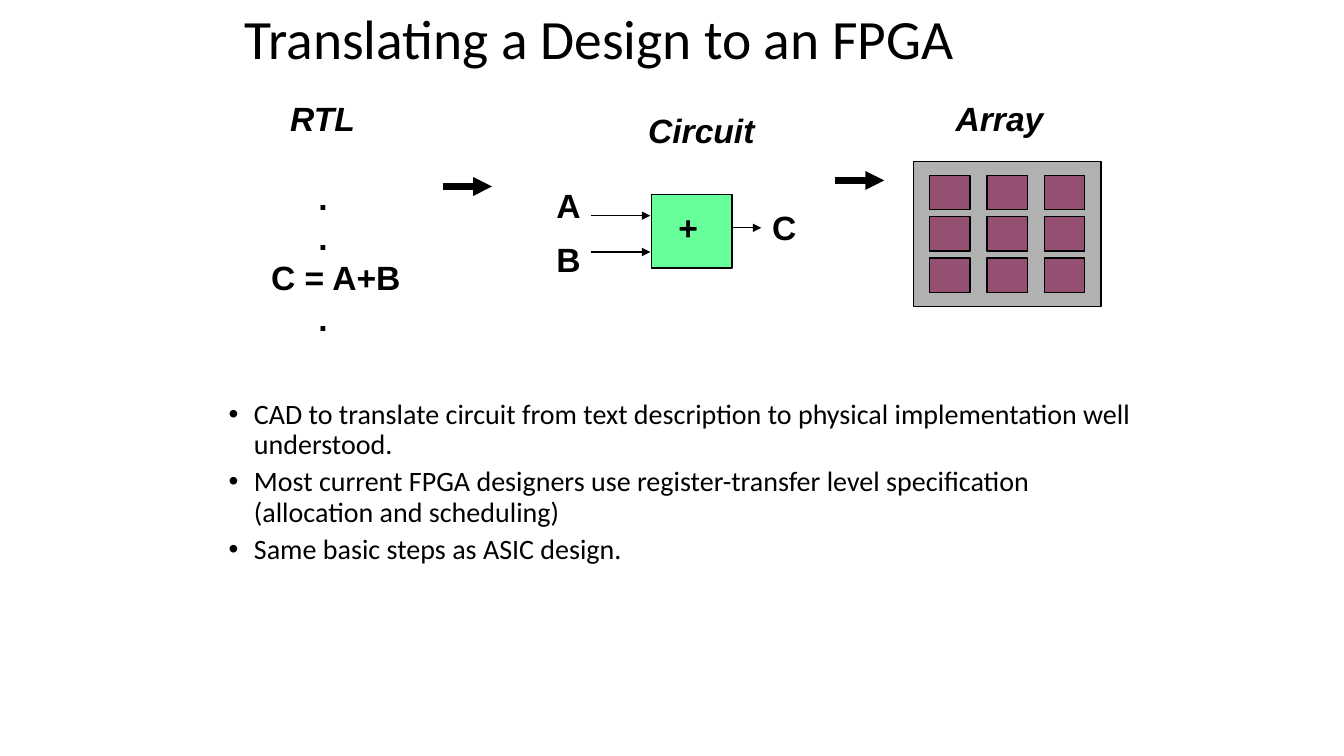
from dataclasses import dataclass

from lxml import etree
from pptx import Presentation
from pptx.dml.color import RGBColor
from pptx.enum.shapes import MSO_CONNECTOR, MSO_SHAPE
from pptx.enum.text import MSO_ANCHOR
from pptx.oxml.ns import qn
from pptx.slide import Slide
from pptx.util import Inches, Pt

RECTANGLE = MSO_SHAPE.RECTANGLE
STRAIGHT = MSO_CONNECTOR.STRAIGHT
TOP, MIDDLE = MSO_ANCHOR.TOP, MSO_ANCHOR.MIDDLE


@dataclass(frozen=True)
class Theme:
    ink: str = "000000"
    adder: str = "66FF99"
    panel: str = "B1B1B1"
    cell: str = "954F72"
    text_font: str = "Calibri"
    label_font: str = "Arial"
    title_size: float = 39.6
    body_size: float = 20
    label_size: float = 24
    thin: float = 1
    thick: float = 4.5


THEME = Theme()


@dataclass(frozen=True)
class Box:
    left: float
    top: float
    width: float
    height: float
    fill: str = THEME.panel


@dataclass(frozen=True)
class Arrow:
    left: float
    right: float
    y: float
    weight: float = THEME.thin


@dataclass(frozen=True)
class Label:
    text: str
    box: Box
    italic: bool = False


@dataclass(frozen=True)
class Line:
    text: str
    indent: float = 0
    hanging: float = 0
    before: float = 0
    italic: bool = False
    bullet: str = ""


BULLETS = (
    "CAD to translate circuit from text description to physical implementation well understood.",
    "Most current FPGA designers use register-transfer level specification "
    "(allocation and scheduling)",
    "Same basic steps as ASIC design.",
)
RTL_CODE = (
    Line("RTL", indent=0.28, italic=True),
    Line(".", indent=0.56, before=27.6),
    Line(".", indent=0.56),
    Line("C = A+B", indent=0.09),
    Line(".", indent=0.56),
)
LABELS = (
    Label("Circuit", Box(6.33, 1.04, 1.4, 0.5), italic=True),
    Label("A", Box(5.42, 1.79, 0.53, 0.5)),
    Label("B", Box(5.42, 2.32, 0.53, 0.5)),
    Label("+", Box(6.63, 2, 0.5, 0.5)),
    Label("C", Box(7.56, 2, 0.53, 0.5)),
    Label("Array", Box(9.38, 0.92, 1.2, 0.5), italic=True),
)
ARROWS = (
    Arrow(4.39, 4.88, 1.85, THEME.thick),
    Arrow(5.86, 6.45, 2.14),
    Arrow(5.86, 6.45, 2.5),
    Arrow(7.25, 7.55, 2.26),
    Arrow(8.28, 8.77, 1.79, THEME.thick),
)
ADDER = Box(6.46, 1.93, 0.8, 0.73, THEME.adder)
PANEL = Box(9.06, 1.6, 1.86, 1.44)
CELL_WIDTH, CELL_HEIGHT = 0.4, 0.34
PITCH_X, PITCH_Y = 0.57, 0.41


def add_text(slide: Slide, box: Box, lines: tuple[Line, ...], *, font: str, size: float,
             bold: bool = False, spacing: float = 1.0, anchor: MSO_ANCHOR = TOP) -> None:
    s = slide.shapes.add_textbox(
        Inches(box.left), Inches(box.top), Inches(box.width), Inches(box.height))
    tf = s.text_frame
    tf.word_wrap = True
    tf.vertical_anchor = anchor
    for i, line in enumerate(lines):
        p = tf.add_paragraph() if i else tf.paragraphs[0]
        p.line_spacing = spacing
        p.space_before = Pt(line.before)
        props = p._p.get_or_add_pPr()
        props.set("marL", str(Inches(line.indent)))
        props.set("indent", str(Inches(line.hanging)))
        if line.bullet:
            etree.SubElement(props, qn("a:buFont"), typeface="Arial")
            etree.SubElement(props, qn("a:buChar"), char=line.bullet)
        r = p.add_run()
        r.text = line.text
        r.font.name = font
        r.font.size = Pt(size)
        r.font.bold = bold
        r.font.italic = line.italic
        r.font.color.rgb = RGBColor.from_string(THEME.ink)


def add_box(slide: Slide, box: Box) -> None:
    s = slide.shapes.add_shape(
        RECTANGLE, Inches(box.left), Inches(box.top), Inches(box.width), Inches(box.height))
    s.shadow.inherit = False
    s.fill.solid()
    s.fill.fore_color.rgb = RGBColor.from_string(box.fill)
    s.line.color.rgb = RGBColor.from_string(THEME.ink)
    s.line.width = Pt(THEME.thin)


def add_arrow(slide: Slide, arrow: Arrow) -> None:
    s = slide.shapes.add_connector(
        STRAIGHT, Inches(arrow.left), Inches(arrow.y), Inches(arrow.right), Inches(arrow.y))
    s.line.color.rgb = RGBColor.from_string(THEME.ink)
    s.line.width = Pt(arrow.weight)
    etree.SubElement(s.line._get_or_add_ln(), qn("a:tailEnd"), type="triangle")
    etree.SubElement(s._element.spPr, qn("a:effectLst"))


def add_array(slide: Slide) -> None:
    add_box(slide, PANEL)
    middle_left = PANEL.left + (PANEL.width - CELL_WIDTH) / 2
    middle_top = PANEL.top + (PANEL.height - CELL_HEIGHT) / 2
    for row in (-1, 0, 1):
        for col in (-1, 0, 1):
            add_box(slide, Box(middle_left + col * PITCH_X, middle_top + row * PITCH_Y,
                               CELL_WIDTH, CELL_HEIGHT, THEME.cell))


def main() -> None:
    prs = Presentation()
    prs.slide_width, prs.slide_height = Inches(13.33), Inches(7.5)
    slide = prs.slides.add_slide(prs.slide_layouts[6])
    add_text(slide, Box(2.33, 0.25, 7.86, 0.33), (Line("Translating a Design to an FPGA"),),
             font=THEME.text_font, size=THEME.title_size, spacing=0.9, anchor=MIDDLE)
    bullets = tuple(Line(text, indent=0.75, hanging=-0.25, before=5, bullet="•")
                    for text in BULLETS)
    add_text(slide, Box(1.67, 3.92, 9.67, 2.62), bullets,
             font=THEME.text_font, size=THEME.body_size, spacing=0.9)
    add_text(slide, Box(2.5, 0.92, 1.8, 2.52), RTL_CODE,
             font=THEME.label_font, size=THEME.label_size, bold=True)
    add_box(slide, ADDER)
    for arrow in ARROWS:
        add_arrow(slide, arrow)
    for label in LABELS:
        add_text(slide, label.box, (Line(label.text, italic=label.italic),),
                 font=THEME.label_font, size=THEME.label_size, bold=True)
    add_array(slide)
    prs.save("out.pptx")


if __name__ == "__main__":
    main()
